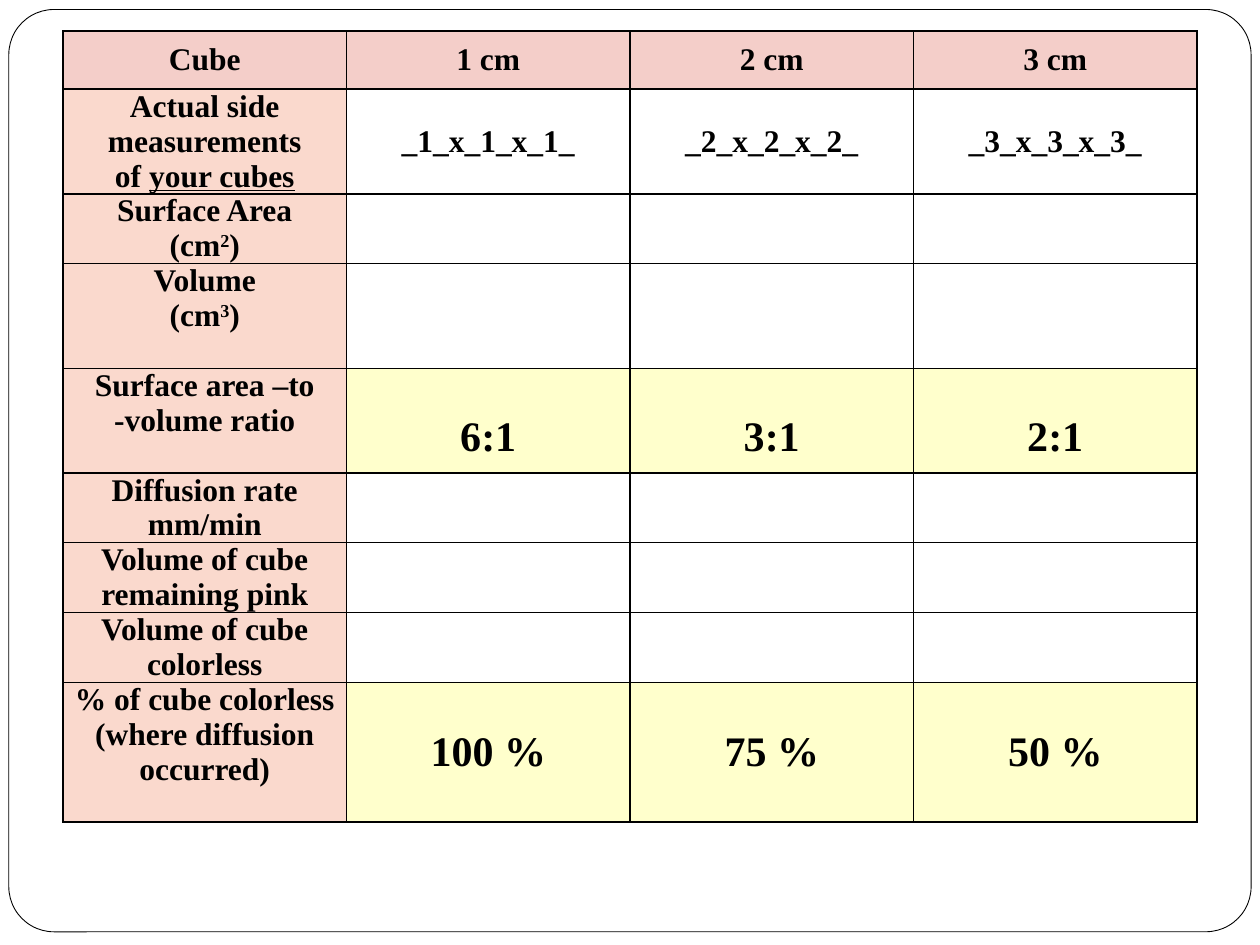
from lxml import etree
from pptx import Presentation
from pptx.dml.color import RGBColor
from pptx.enum.shapes import MSO_SHAPE
from pptx.enum.text import MSO_ANCHOR, PP_ALIGN
from pptx.oxml.ns import qn
from pptx.util import Inches, Pt

ROUNDED = MSO_SHAPE.ROUNDED_RECTANGLE
TOP, MIDDLE = MSO_ANCHOR.TOP, MSO_ANCHOR.MIDDLE
CENTER = PP_ALIGN.CENTER
BLANK_LAYOUT = 6

BLACK, WHITE = "000000", "FFFFFF"
HEADER, LABEL, RESULT = "F4CEC9", "FAD9CD", "FFFFCC"
SIZES = ["1 cm", "2 cm", "3 cm"]
TEXT_LINE = 0.277  # inches taken by one line of 18 point text


def color(code):
    return RGBColor.from_string(code)


def unit(name, power):
    """Spans for a bracketed unit with a raised power."""
    return [f"({name}", (power, {"raised": True}), ")"]


# Each row: label paragraphs, values, height in text lines, value format
ROWS = [
    (["Actual side measurements", ["of ", ("your cubes", {"underline": True})]],
     ["_1_x_1_x_1_", "_2_x_2_x_2_", "_3_x_3_x_3_"], 3, {}),
    (["Surface Area", unit("cm", "2")], None, 2, {}),
    (["Volume", unit("cm", "3")], None, 3, {}),
    (["Surface area –to -volume ratio"], ["6:1", "3:1", "2:1"], 3,
     {"size": 24, "fill": RESULT, "top": 0.27}),
    (["Diffusion rate", "mm/min"], None, 2, {}),
    (["Volume of cube remaining pink"], None, 2, {}),
    (["Volume of cube", "colorless"], None, 2, {}),
    (["% of cube colorless", "(where diffusion occurred)"],
     ["100 %", "75 %", "50 %"], 4, {"size": 24, "fill": RESULT}),
]


def add_span(para, text, size=18, underline=False, raised=False):
    span = para.add_run()
    span.text = text
    font = span.font
    font.name, font.size, font.bold = "Times New Roman", Pt(size), True
    font.color.rgb = color(BLACK)
    if underline:
        font.underline = True
    if raised:
        span._r.get_or_add_rPr().set("baseline", "30000")


class SlideBuilder:
    def __init__(self, deck):
        self.width, self.height = deck.slide_width, deck.slide_height
        self.slide = deck.slides.add_slide(deck.slide_layouts[BLANK_LAYOUT])

    def place(self, left, top, width, height):
        """Turn shares of the slide into lengths."""
        return (int(left * self.width), int(top * self.height),
                int(width * self.width), int(height * self.height))

    def frame(self, *shares):
        box = self.slide.shapes.add_shape(ROUNDED, *self.place(*shares))
        box.adjustments[0] = 0.049
        box.shadow.inherit = False
        box.fill.solid()
        box.fill.fore_color.rgb = color(WHITE)
        box.line.color.rgb = color(BLACK)
        box.line.width = Pt(0.5)

    def table(self, shares, columns, row_heights):
        shape = self.slide.shapes.add_table(
            len(row_heights), columns, *self.place(*shares))
        table = shape.table
        table.first_row = table.horz_banding = False
        for row, height in zip(table.rows, row_heights):
            row.height = Inches(height)
        return table

    def borders(self, cell):
        properties = cell._tc.get_or_add_tcPr()
        for side in ("lnL", "lnR", "lnT", "lnB"):
            line = etree.SubElement(properties, qn(f"a:{side}"), w=str(Pt(1)))
            paint = etree.SubElement(line, qn("a:solidFill"))
            etree.SubElement(paint, qn("a:srgbClr"), val=BLACK)

    def cell(self, cell, paragraphs, fill=WHITE, anchor=MIDDLE, size=18, top=0):
        """Fill a cell; a paragraph is a string or a list of spans."""
        self.borders(cell)
        cell.fill.solid()
        cell.fill.fore_color.rgb = color(fill)
        cell.vertical_anchor = anchor
        cell.margin_left = cell.margin_right = Inches(0.07)
        cell.margin_top, cell.margin_bottom = Inches(top), 0
        frame = cell.text_frame
        for index, content in enumerate(paragraphs):
            para = frame.add_paragraph() if index else frame.paragraphs[0]
            para.alignment = CENTER
            for part in [content] if isinstance(content, str) else content:
                text, style = (part, {}) if isinstance(part, str) else part
                add_span(para, text, size=size, **style)


def main():
    deck = Presentation()
    deck.slide_width, deck.slide_height = Inches(10), Inches(7.5)
    builder = SlideBuilder(deck)
    builder.frame(0.007, 0.01, 0.986, 0.976)

    heights = [0.46] + [lines * TEXT_LINE for _, _, lines, _ in ROWS]
    table = builder.table((0.05, 0.033, 0.9, sum(heights) / 7.5),
                          1 + len(SIZES), heights)
    for column, heading in enumerate(["Cube"] + SIZES):
        builder.cell(table.cell(0, column), [heading], fill=HEADER)
    for row, (label, values, _, style) in enumerate(ROWS, start=1):
        builder.cell(table.cell(row, 0), label, fill=LABEL, anchor=TOP)
        for column in range(1, 1 + len(SIZES)):
            content = [values[column - 1]] if values else []
            builder.cell(table.cell(row, column), content, **style)

    deck.save("out.pptx")


if __name__ == "__main__":
    main()
